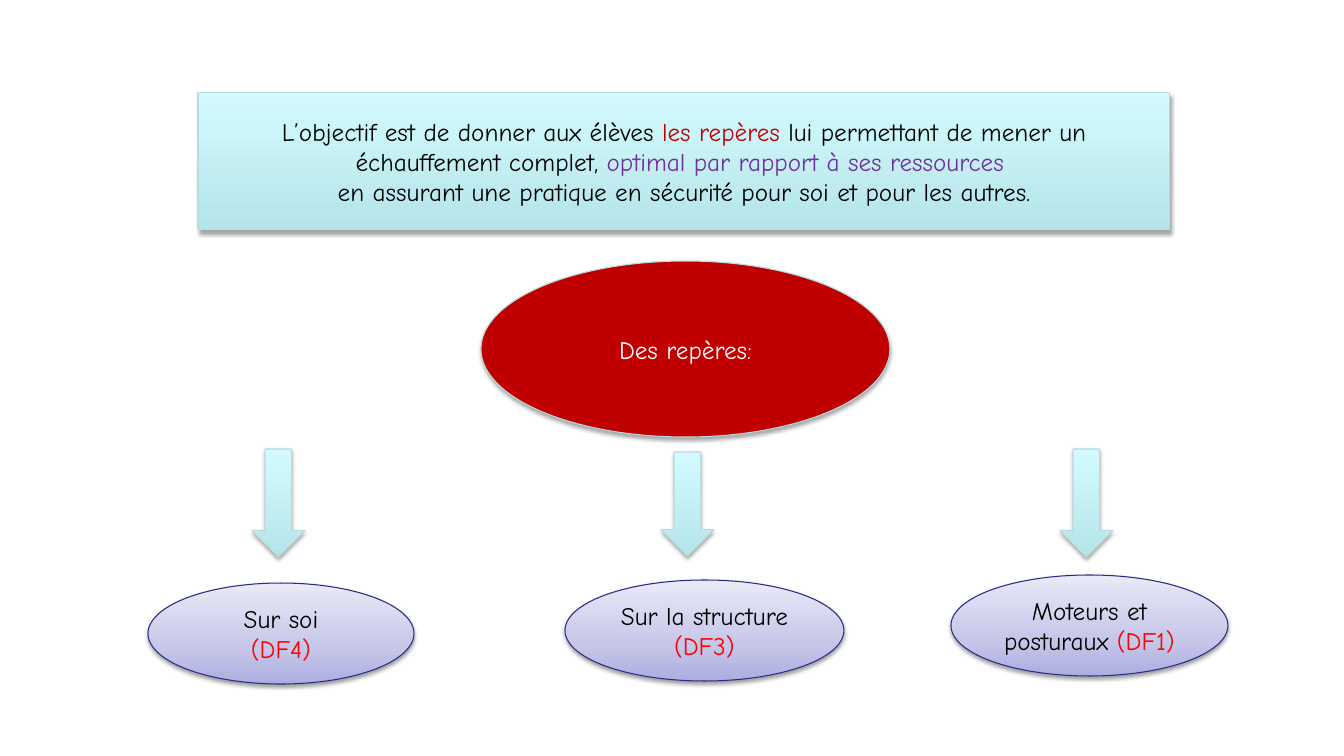
"""Build the slide on the warm-up reference points given to pupils."""
from lxml import etree
from pptx import Presentation
from pptx import util as u
from pptx.dml.color import RGBColor
from pptx.enum import shapes, text
from pptx.oxml.ns import qn

PX = 914400 / 100.8
FONT = "Comic Neue"
COLORS = {
    "black": "000000", "white": "FFFFFF", "dark_red": "C00000",
    "red": "FF0000", "purple": "7030A0",
    "aqua_line": "B6DCDF", "navy": "2A2A89",
}
AQUA = [(0, "B5E5E9"), (100, "D3FBFF")]
LAVENDER = [(0, "ADADE1"), (35, "C6C6E9"), (100, "E9E9F7")]
SHAPE = shapes.MSO_SHAPE


def px(length):
    """Turn pixels into EMU."""
    return u.Emu(round(length * PX))


def add_color(parent, color, alpha=100):
    """Append an RGB colour with its opacity to an XML element."""
    element = etree.SubElement(parent, qn("a:srgbClr"), val=color)
    if alpha < 100:
        etree.SubElement(element, qn("a:alpha"), val=str(alpha * 1000))


def set_gradient(shape, stops):
    """Fill a shape with a gradient that rises from bottom to top."""
    shape.fill.gradient()
    shape.fill.gradient_angle = 90
    stop_list = next(shape._element.spPr.iter(qn("a:gsLst")))
    for stop in list(stop_list):
        stop_list.remove(stop)
    for position, color in stops:
        stop = etree.SubElement(stop_list, qn("a:gs"), pos=str(position * 1000))
        add_color(stop, color)


def set_shadow(shape, alpha, distance):
    """Give a shape a soft shadow straight below it."""
    shape.shadow.inherit = False
    effects = shape._element.spPr.find(qn("a:effectLst"))
    shadow = etree.SubElement(
        effects, qn("a:outerShdw"), blurRad=str(u.Pt(3.1)),
        dist=str(u.Pt(distance)), dir="5400000", rotWithShape="0")
    add_color(shadow, COLORS["black"], alpha)


def add_box(slide, kind, box, fill, line="aqua_line", alpha=35, distance=1.8):
    """Add a preset shape with a plain or gradient fill."""
    shape = slide.shapes.add_shape(kind, *map(px, box))
    if isinstance(fill, str):
        shape.fill.solid()
        shape.fill.fore_color.rgb = RGBColor.from_string(COLORS[fill])
    else:
        set_gradient(shape, fill)
    shape.line.color.rgb = RGBColor.from_string(COLORS[line])
    shape.line.width = u.Pt(0.75)
    set_shadow(shape, alpha, distance)
    return shape


def write(shape, paragraphs, size=18, font=FONT, align=text.PP_ALIGN.CENTER):
    """Write paragraphs of (words, colour) runs into a shape."""
    frame = shape.text_frame
    frame.word_wrap = True
    frame.vertical_anchor = text.MSO_ANCHOR.MIDDLE
    for index, runs in enumerate(paragraphs):
        paragraph = frame.add_paragraph() if index else frame.paragraphs[0]
        paragraph.alignment = align
        for words, color in runs:
            run = paragraph.add_run()
            run.text = words
            run.font.size = u.Pt(size)
            run.font.name = font
            run.font.color.rgb = RGBColor.from_string(COLORS[color])


def add_arrow(slide, left, top, height):
    """Add a block arrow pointing down."""
    add_box(slide, SHAPE.DOWN_ARROW, (left, top, 53, height), AQUA)


def add_topic(slide, left, top, width, paragraphs):
    """Add a lavender ellipse naming one kind of reference point."""
    box = (left, top, width, 101)
    ellipse = add_box(slide, SHAPE.OVAL, box, LAVENDER, line="navy",
                      alpha=38, distance=1.6)
    write(ellipse, paragraphs)


def main():
    """Build and save the slide."""
    presentation = Presentation()
    presentation.slide_width, presentation.slide_height = px(1344), px(756)
    slide = presentation.slides.add_slide(presentation.slide_layouts[6])

    objective = add_box(slide, SHAPE.RECTANGLE, (198, 93, 972, 137), AQUA)
    write(objective, [
        [("L’objectif est de donner aux élèves ", "black"),
         ("les repères ", "dark_red"),
         ("lui permettant de mener un échauffement complet, ", "black"),
         ("optimal par rapport à ses ressources ", "purple")],
        [("en assurant une pratique en sécurité pour soi et pour les autres.",
          "black")],
    ])

    for left, top, height in [(252, 449, 108), (661, 452, 104), (1060, 449, 108)]:
        add_arrow(slide, left, top, height)

    add_topic(slide, 148, 583, 266,
              [[("Sur soi", "black")], [("(DF4)", "red")]])
    add_topic(slide, 565, 580, 279,
              [[("Sur la structure ", "black"), ("(DF3)", "red")]])
    add_topic(slide, 951, 575, 277,
              [[("Moteurs et posturaux ", "black"), ("(DF1)", "red")]])

    landmarks = add_box(slide, SHAPE.OVAL, (481, 261, 409, 176), "dark_red")
    write(landmarks, [[("Des repères:", "white")]])

    presentation.save("out.pptx")


if __name__ == "__main__":
    main()
